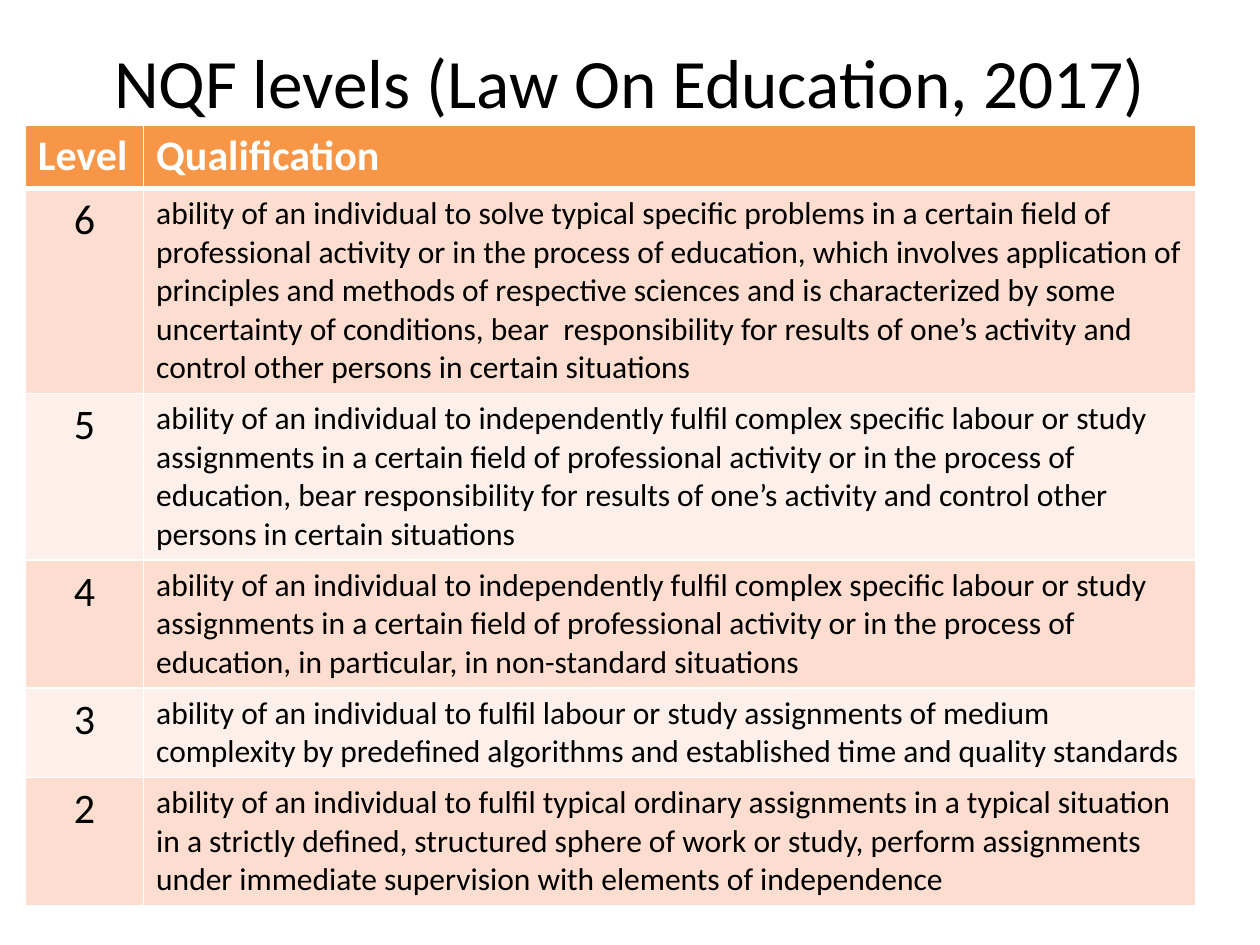
import pptx
import pptx.dml.color
import pptx.enum.text
import pptx.oxml.ns
import pptx.util
import lxml.etree

Inches = pptx.util.Inches
Pt = pptx.util.Pt
RGBColor = pptx.dml.color.RGBColor
PP_ALIGN = pptx.enum.text.PP_ALIGN
MSO_ANCHOR = pptx.enum.text.MSO_ANCHOR
qn = pptx.oxml.ns.qn

THEME = {
    "font": "Calibri",
    "text": "000000",
    "header_text": "FFFFFF",
    "header_fill": "F79646",
    "bands": ["FCDDCF", "FDEFE9"],
    "rule": "FFFFFF",
    "title_size": 39.6,
    "label_size": 24,
    "body_size": 18,
}

LEVELS = [
    ("6", "ability of an individual to solve typical specific problems in a certain field of "
          "professional activity or in the process of education, which involves application of "
          "principles and methods of respective sciences and is characterized by some "
          "uncertainty of conditions, bear  responsibility for results of one’s activity and "
          "control other persons in certain situations"),
    ("5", "ability of an individual to independently fulfil complex specific labour or study "
          "assignments in a certain field of professional activity or in the process of "
          "education, bear responsibility for results of one’s activity and control other "
          "persons in certain situations"),
    ("4", "ability of an individual to independently fulfil complex specific labour or study "
          "assignments in a certain field of professional activity or in the process of "
          "education, in particular, in non-standard situations"),
    ("3", "ability of an individual to fulfil labour or study assignments of medium "
          "complexity by predefined algorithms and established time and quality standards"),
    ("2", "ability of an individual to fulfil typical ordinary assignments in a typical situation "
          "in a strictly defined, structured sphere of work or study, perform assignments "
          "under immediate supervision with elements of independence"),
]


def add_text(paragraph, text, size, color, bold=False):
    run = paragraph.add_run()
    run.text = text
    run.font.name = THEME["font"]
    run.font.size = Pt(size)
    run.font.bold = bold
    run.font.color.rgb = RGBColor.from_string(color)


def add_borders(cell, widths):
    properties = cell._tc.get_or_add_tcPr()
    for side, width in widths.items():
        line = lxml.etree.SubElement(properties, qn("a:" + side), w=str(Pt(width)))
        fill = lxml.etree.SubElement(line, qn("a:solidFill"))
        lxml.etree.SubElement(fill, qn("a:srgbClr"), val=THEME["rule"])


deck = pptx.Presentation()
deck.slide_width, deck.slide_height = Inches(10), Inches(7.5)
slide = deck.slides.add_slide(deck.slide_layouts[5])

# Title
title = slide.shapes.title
title.left, title.top = Inches(0.5), Inches(0.3)
title.width, title.height = Inches(9), Inches(0.69)
title.text_frame.vertical_anchor = MSO_ANCHOR.MIDDLE
heading = title.text_frame.paragraphs[0]
heading.alignment = PP_ALIGN.CENTER
add_text(heading, "NQF levels (Law On Education, 2017)", THEME["title_size"], THEME["text"])

# Table of levels; rows grow to fit their text
rows = [("Level", "Qualification")] + LEVELS
row_height = Inches(0.41)
levels = slide.shapes.add_table(len(rows), 2, Inches(0.2), Inches(0.99),
                                Inches(9.29), row_height * len(rows)).table
levels.columns[0].width = Inches(0.94)
levels.columns[1].width = Inches(8.35)

for r, row in enumerate(rows):
    levels.rows[r].height = row_height
    is_header = r == 0
    fill = THEME["header_fill"] if is_header else THEME["bands"][(r - 1) % 2]
    color = THEME["header_text"] if is_header else THEME["text"]
    for c, text in enumerate(row):
        cell = levels.cell(r, c)
        add_borders(cell, {"lnL": 1, "lnR": 1, "lnT": 3 if r == 1 else 1,
                           "lnB": 3 if is_header else 1})
        cell.fill.solid()
        cell.fill.fore_color.rgb = RGBColor.from_string(fill)
        paragraph = cell.text_frame.paragraphs[0]
        is_level = c == 0 and not is_header
        paragraph.alignment = PP_ALIGN.CENTER if is_level else PP_ALIGN.LEFT
        size = THEME["label_size"] if is_header or is_level else THEME["body_size"]
        add_text(paragraph, text, size, color, bold=is_header)

deck.save("out.pptx")
